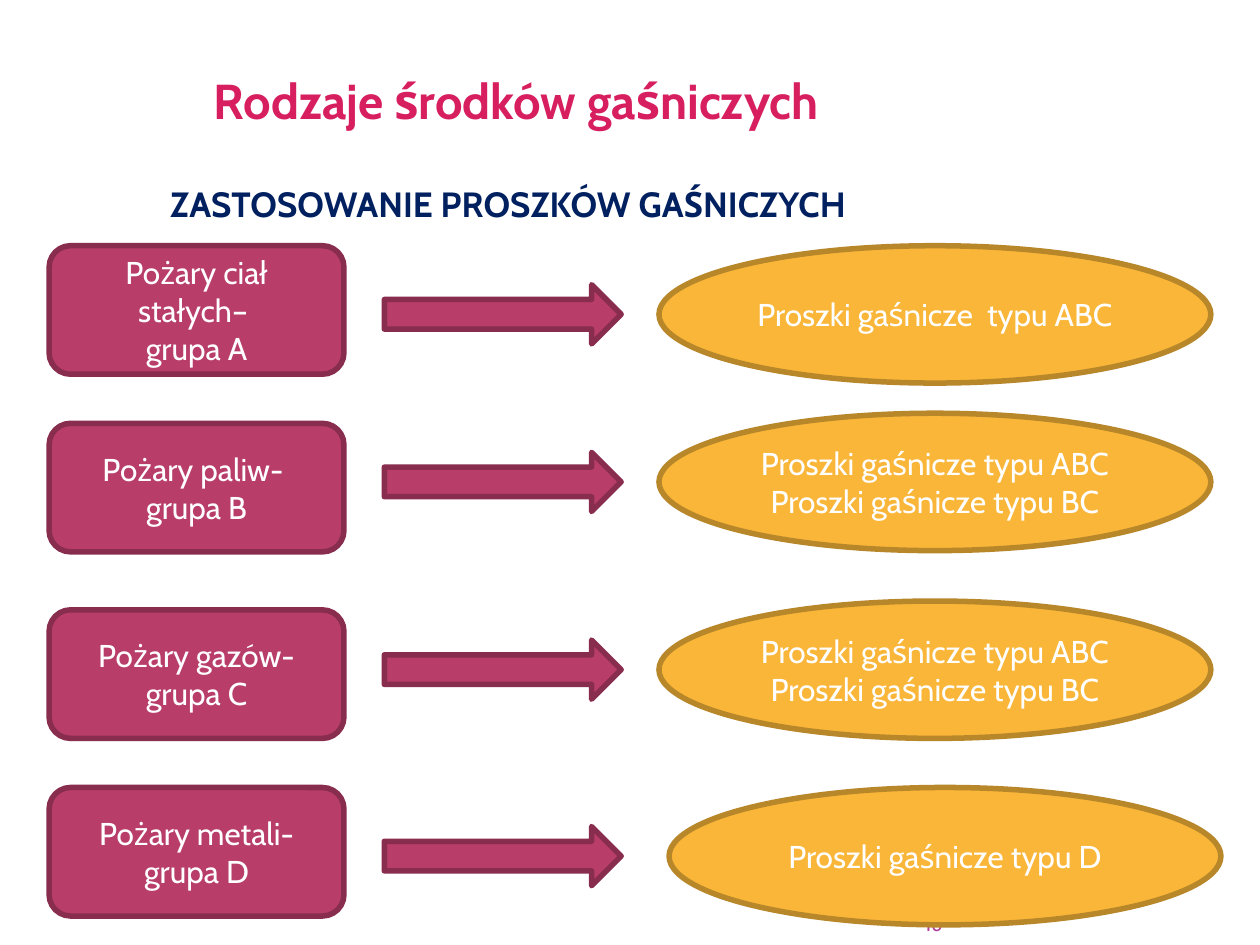
from lxml.etree import SubElement
from pptx import Presentation
from pptx.dml.color import RGBColor
from pptx.enum.shapes import MSO_SHAPE as Shape
from pptx.enum.text import MSO_ANCHOR as Anchor, MSO_AUTO_SIZE as AutoSize, PP_ALIGN as Align
from pptx.oxml.ns import qn
from pptx.util import Inches, Pt

FONT = "Cabin"
COLORS = {
    "heading": "D71E5F", "subtitle": "002060", "number": "B13F9A", "label": "FFFFFF",
    "fire": "B83D68", "fire_edge": "882D4D", "powder": "F9B639", "powder_edge": "B8872A",
}

HEADING = "Rodzaje środków gaśniczych"
SUBTITLE = "ZASTOSOWANIE PROSZKÓW GAŚNICZYCH"
PAGE_NUMBER = "16"
ABC, BC = "Proszki gaśnicze typu ABC", "Proszki gaśnicze typu BC"
ROWS = [
    ("Pożary ciał stałych– \ngrupa A", "Proszki gaśnicze  typu ABC"),
    ("Pożary paliw- \ngrupa B", f"{ABC}\n{BC}"),
    ("Pożary gazów- grupa C", f"{ABC}\n{BC}"),
    ("Pożary metali-\ngrupa D", "Proszki gaśnicze typu D"),
]

FIRE_TOPS = [1.95, 3.36, 4.84, 6.25]
POWDER_TOPS = [1.95, 3.28, 4.77, 6.25]
FIRE_LEFT, ARROW_LEFT = 0.39, 3.05
POWDER_LEFTS = [5.23, 5.23, 5.23, 5.31]
FIRE_SIZE, ARROW_SIZE, POWDER_SIZE = (2.34, 1.02), (1.88, 0.47), (4.38, 1.09)


def color(name):
    return RGBColor.from_string(COLORS[name])


def write(holder, text, size, color_name, align, anchor, bold=False, margins=None):
    frame = holder.text_frame
    frame.text = text
    frame.word_wrap = True
    frame.auto_size = AutoSize.NONE
    frame.vertical_anchor = anchor
    if margins:
        (frame.margin_left, frame.margin_top,
         frame.margin_right, frame.margin_bottom) = map(Inches, margins)
    for paragraph in frame.paragraphs:
        paragraph.alignment = align
        for run in paragraph.runs:
            run.font.name = FONT
            run.font.size = Pt(size)
            run.font.bold = bold
            run.font.color.rgb = color(color_name)


def add_figure(slide, kind, left, top, size, palette, text=""):
    figure = slide.shapes.add_shape(kind, *map(Inches, (left, top, *size)))
    figure.shadow.inherit = False
    figure.fill.solid()
    figure.fill.fore_color.rgb = color(palette)
    figure.line.color.rgb = color(f"{palette}_edge")
    figure.line.width = Pt(3.15)
    SubElement(figure.line._get_or_add_ln(), qn("a:round"))
    if text:
        write(figure, text, 18, "label", Align.CENTER, Anchor.MIDDLE)


def main():
    deck = Presentation()
    deck.slide_width, deck.slide_height = Inches(10), Inches(7.5)
    slide = deck.slides.add_slide(deck.slide_layouts[5])

    subtitle = slide.shapes.title
    subtitle.left, subtitle.top, subtitle.width, subtitle.height = map(
        Inches, (1.3, 0.79, 7.56, 0.99))
    write(subtitle, SUBTITLE, 20, "subtitle", Align.LEFT, Anchor.BOTTOM, True,
          (0.05, 0, 0.05, 0))

    number = slide.shapes.add_textbox(*map(Inches, (6.84, 7.17, 0.64, 0.25)))
    write(number, PAGE_NUMBER, 11, "number", Align.RIGHT, Anchor.BOTTOM,
          margins=(0, 0, 0, 0))

    places = zip(ROWS, FIRE_TOPS, POWDER_TOPS, POWDER_LEFTS)
    for (fire, powder), fire_top, powder_top, powder_left in places:
        arrow_top = powder_top + (POWDER_SIZE[1] - ARROW_SIZE[1]) / 2
        add_figure(slide, Shape.ROUNDED_RECTANGLE, FIRE_LEFT, fire_top, FIRE_SIZE, "fire", fire)
        add_figure(slide, Shape.RIGHT_ARROW, ARROW_LEFT, arrow_top, ARROW_SIZE, "fire")
        add_figure(slide, Shape.OVAL, powder_left, powder_top, POWDER_SIZE, "powder", powder)

    heading = slide.shapes.add_textbox(*map(Inches, (1.6, 0.11, 8.17, 1.37)))
    write(heading, HEADING, 28, "heading", Align.LEFT, Anchor.MIDDLE, True,
          (0.1, 0.05, 0.05, 0.05))

    deck.save("out.pptx")


if __name__ == "__main__":
    main()
